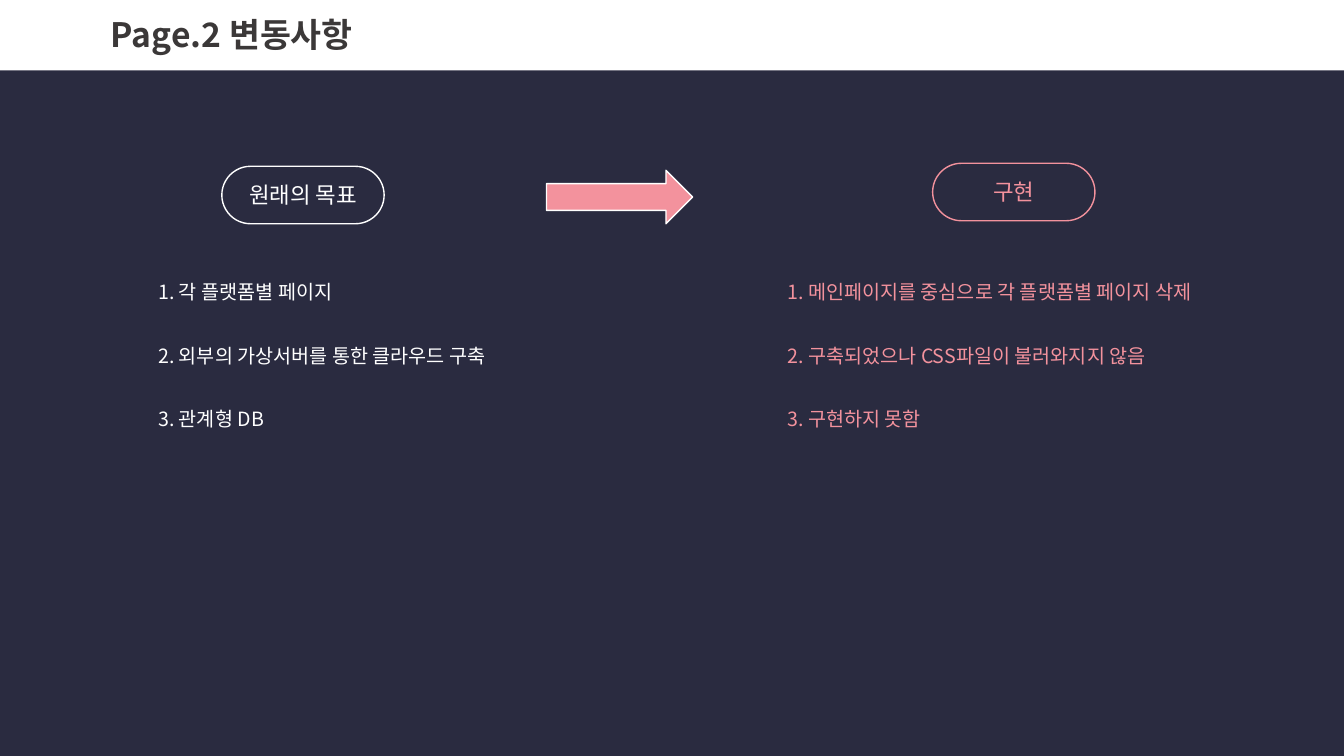
from lxml.etree import SubElement
from pptx import Presentation
from pptx.dml.color import RGBColor
from pptx.enum.shapes import MSO_SHAPE
from pptx.enum.text import MSO_ANCHOR, PP_ALIGN
from pptx.oxml.ns import qn
from pptx.util import Inches, Pt

NAVY, WHITE, PINK, GREY = "2A2B40", "FFFFFF", "F3929D", "3B3838"
KR, SC = "Noto Sans CJK KR", "Noto Sans CJK SC"


def rgb(value):
    return RGBColor.from_string(value)


def write(p, text, font=KR, size=16, color=WHITE, bold=False, align=PP_ALIGN.LEFT):
    p.alignment = align
    r = p.add_run()
    r.text = text
    r.font.name = font
    r.font.size = Pt(size)
    r.font.bold = bold
    r.font.color.rgb = rgb(color)
    # East Asian typeface for the Korean letters
    SubElement(r.font._element, qn("a:ea")).set("typeface", font)


class Deck:
    def __init__(self):
        self.prs = Presentation()
        self.prs.slide_width, self.prs.slide_height = Inches(13.33), Inches(7.5)
        self.s = self.prs.slides.add_slide(self.prs.slide_layouts[6])
        fill = self.s.background.fill
        fill.solid()
        fill.fore_color.rgb = rgb(NAVY)

    def shape(self, kind, x, y, w, h, fill=None, line=None):
        sp = self.s.shapes.add_shape(kind, Inches(x), Inches(y), Inches(w), Inches(h))
        sp.shadow.inherit = False
        if fill:
            sp.fill.solid()
            sp.fill.fore_color.rgb = rgb(fill)
        else:
            sp.fill.background()
        if line:
            sp.line.color.rgb = rgb(line)
            sp.line.width = Pt(1)
        else:
            sp.line.fill.background()
        return sp

    def header(self, text):
        sp = self.shape(MSO_SHAPE.RECTANGLE, 0, -0.03, 13.33, 0.73, fill=WHITE)
        tf = sp.text_frame
        tf.margin_left = Inches(1.1)
        tf.vertical_anchor = MSO_ANCHOR.MIDDLE
        write(tf.paragraphs[0], text, size=24, color=GREY, bold=True)

    def pill(self, x, y, text, color):
        sp = self.shape(MSO_SHAPE.ROUNDED_RECTANGLE, x, y, 1.61, 0.57, line=color)
        sp.adjustments[0] = 0.5
        tf = sp.text_frame
        tf.word_wrap = False
        tf.vertical_anchor = MSO_ANCHOR.MIDDLE
        write(tf.paragraphs[0], text, color=color, align=PP_ALIGN.CENTER)

    def points(self, x, items, color):
        sp = self.s.shapes.add_textbox(Inches(x), Inches(2.61), Inches(4.68), Inches(1.83))
        tf = sp.text_frame
        tf.word_wrap = True
        for i, item in enumerate(items):
            p = tf.add_paragraph() if i else tf.paragraphs[0]
            p.line_spacing = 1.5
            p.space_before = Pt(20.3 if i else 0)
            write(p, f"{i + 1}. {item}", font=SC, size=14, color=color)


def main():
    deck = Deck()
    deck.header("Page.2 변동사항")

    # Original goals
    deck.pill(2.2, 1.65, "원래의 목표", WHITE)
    deck.points(1.47, ["각 플랫폼별 페이지", "외부의 가상서버를 통한 클라우드 구축", "관계형 DB"], WHITE)

    # Arrow from goals to results
    deck.shape(MSO_SHAPE.RIGHT_ARROW, 5.42, 1.69, 1.45, 0.53, fill=PINK, line=WHITE)

    # Implemented results
    deck.pill(9.25, 1.62, "구현", PINK)
    deck.points(7.71, ["메인페이지를 중심으로 각 플랫폼별 페이지 삭제",
                       "구축되었으나 CSS파일이 불러와지지 않음", "구현하지 못함"], PINK)

    deck.prs.save("out.pptx")


if __name__ == "__main__":
    main()
